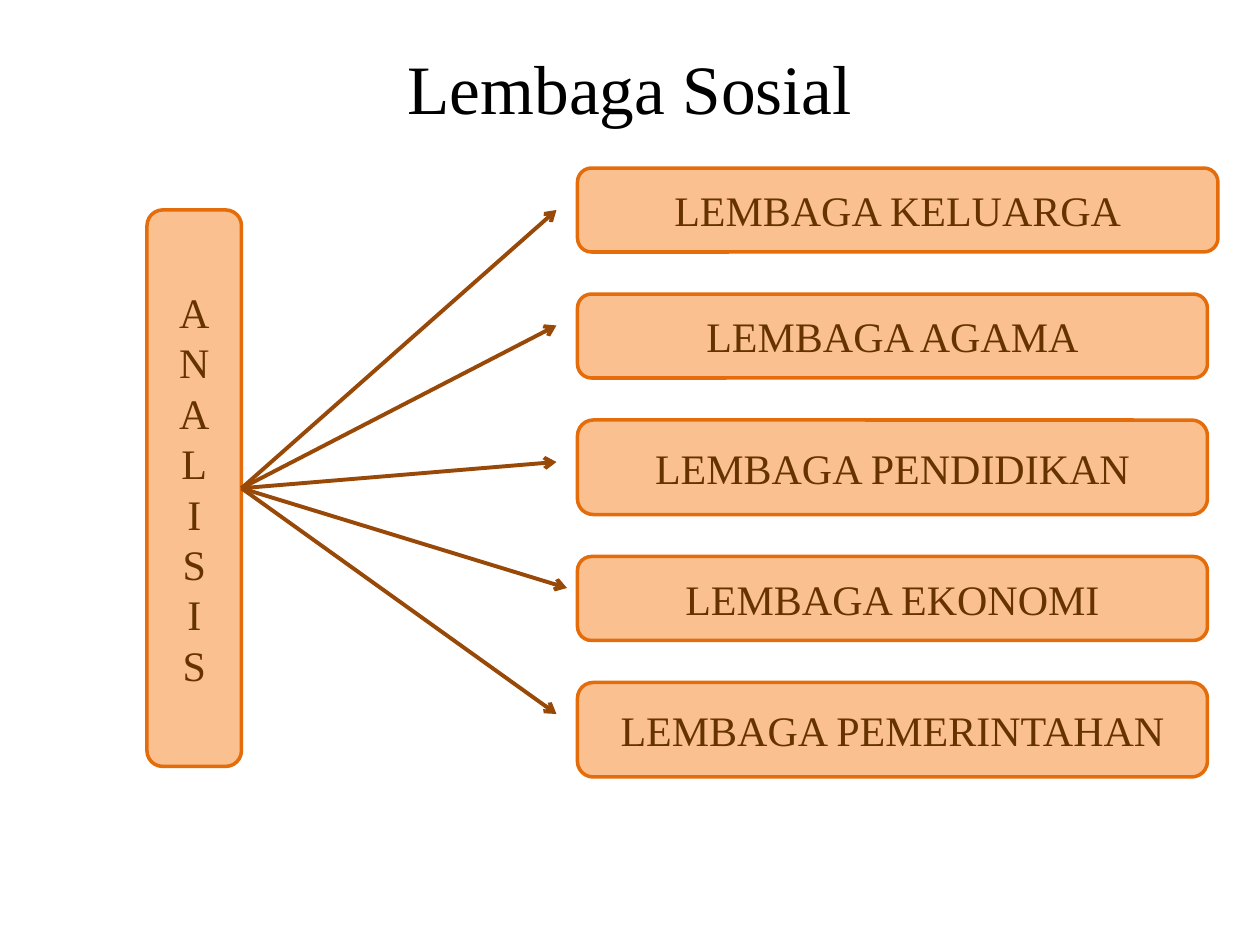
from typing import NamedTuple

from lxml.etree import SubElement
from pptx import Presentation
from pptx.dml.color import RGBColor
from pptx.enum.shapes import MSO_CONNECTOR, MSO_SHAPE
from pptx.enum.text import MSO_ANCHOR, PP_ALIGN
from pptx.oxml.ns import qn
from pptx.util import Pt

FONT = "Times New Roman"
BLACK = RGBColor(0x00, 0x00, 0x00)
PEACH = RGBColor(0xFA, 0xC0, 0x90)
ORANGE = RGBColor(0xE4, 0x6C, 0x0A)
BROWN = RGBColor(0x66, 0x33, 0x00)
RUST = RGBColor(0x98, 0x48, 0x07)


class Box(NamedTuple):
    text: str
    left: float
    top: float
    width: float
    height: float


class Point(NamedTuple):
    x: float
    y: float


class Branch(NamedTuple):
    box: Box
    tip: Point


TITLE = Box("Lembaga Sosial", 36, 21.6, 648, 56.2)
ROOT = Box("ANALISIS", 84, 120, 54, 318)
HUB = Point(ROOT.left + ROOT.width, ROOT.top + ROOT.height / 2)
LEFT = 330
BRANCHES = [
    Branch(Box("LEMBAGA KELUARGA", LEFT, 96, 366, 48), Point(318, 120)),
    Branch(Box("LEMBAGA AGAMA", LEFT, 168, 360, 48), Point(318, 186)),
    Branch(Box("LEMBAGA PENDIDIKAN", LEFT, 240, 360, 54), Point(318, 264)),
    Branch(Box("LEMBAGA EKONOMI", LEFT, 318, 360, 48), Point(324, 336)),
    Branch(Box("LEMBAGA PEMERINTAHAN", LEFT, 390, 360, 54), Point(318, 408)),
]


def place(box: Box) -> tuple:
    return tuple(Pt(n) for n in box[1:])


def write(frame, text: str, size: float, color: RGBColor) -> None:
    frame.word_wrap = True
    frame.vertical_anchor = MSO_ANCHOR.MIDDLE
    par = frame.paragraphs[0]
    par.alignment = PP_ALIGN.CENTER
    run = par.add_run()
    run.text = text
    run.font.name = FONT
    run.font.size = Pt(size)
    run.font.color.rgb = color


def draw_title(slide, box: Box) -> None:
    shape = slide.shapes.add_textbox(*place(box))
    write(shape.text_frame, box.text, 39.6, BLACK)


def draw_box(slide, box: Box, stacked: bool = False) -> None:
    """Draw a rounded box; stacked text puts one upright letter below another."""
    shape = slide.shapes.add_shape(MSO_SHAPE.ROUNDED_RECTANGLE, *place(box))
    shape.shadow.inherit = False
    shape.fill.solid()
    shape.fill.fore_color.rgb = PEACH
    shape.line.color.rgb = ORANGE
    shape.line.width = Pt(2)
    write(shape.text_frame, box.text, 24, BROWN)
    if stacked:
        body = shape.text_frame._txBody.find(qn("a:bodyPr"))
        body.set("vert", "wordArtVert")


def draw_arrow(slide, start: Point, tip: Point) -> None:
    ends = [Pt(n) for n in (*start, *tip)]
    arrow = slide.shapes.add_connector(MSO_CONNECTOR.STRAIGHT, *ends)
    arrow.line.color.rgb = RUST
    arrow.line.width = Pt(2.25)
    props = arrow._element.spPr
    SubElement(props.find(qn("a:ln")), qn("a:tailEnd"), type="arrow")
    SubElement(props, qn("a:effectLst"))


def main() -> None:
    deck = Presentation()
    deck.slide_width, deck.slide_height = Pt(720), Pt(540)
    slide = deck.slides.add_slide(deck.slide_layouts[6])
    draw_title(slide, TITLE)
    for branch in BRANCHES:
        draw_box(slide, branch.box)
    draw_box(slide, ROOT, stacked=True)
    for branch in BRANCHES:
        draw_arrow(slide, HUB, branch.tip)
    deck.save("out.pptx")


if __name__ == "__main__":
    main()
